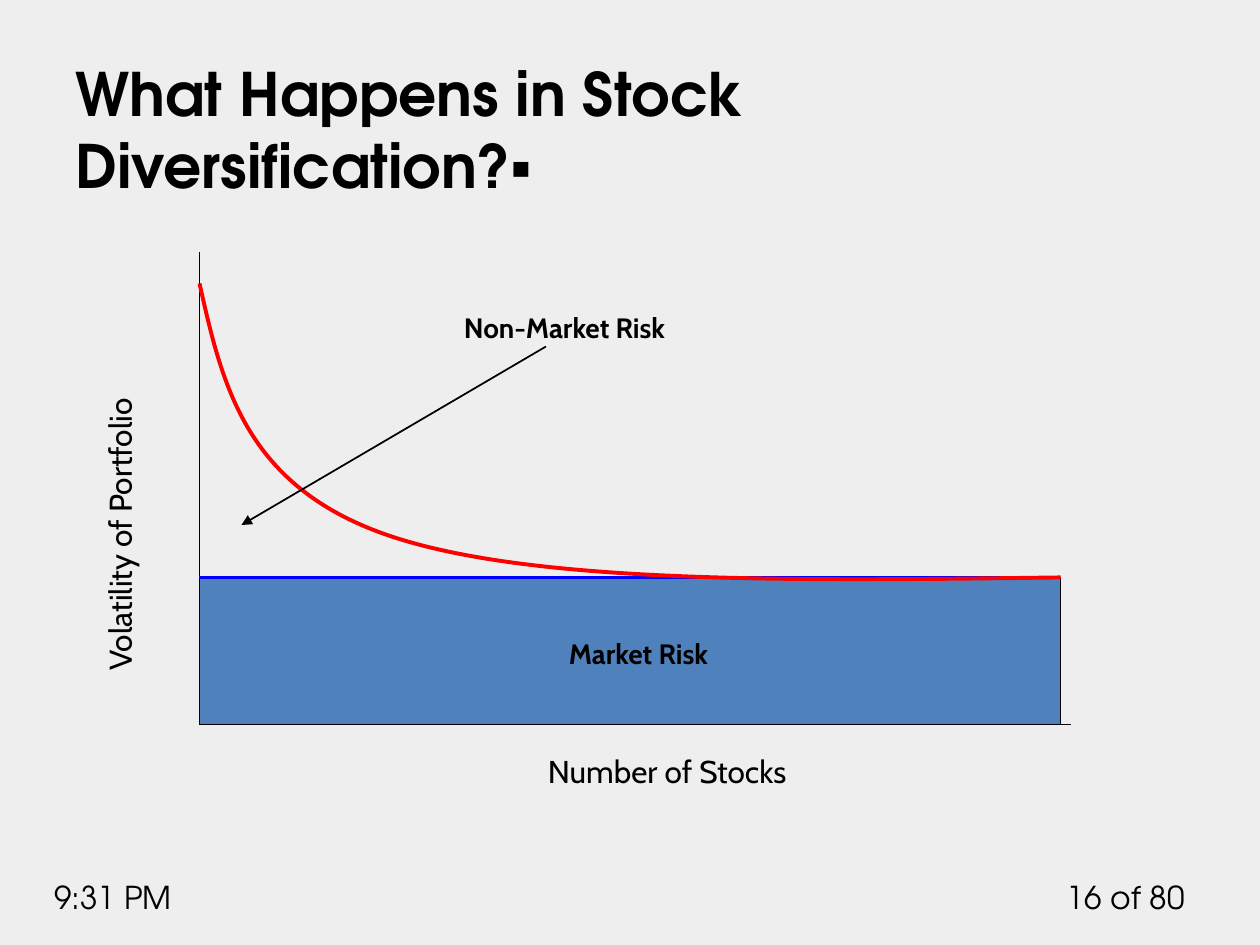
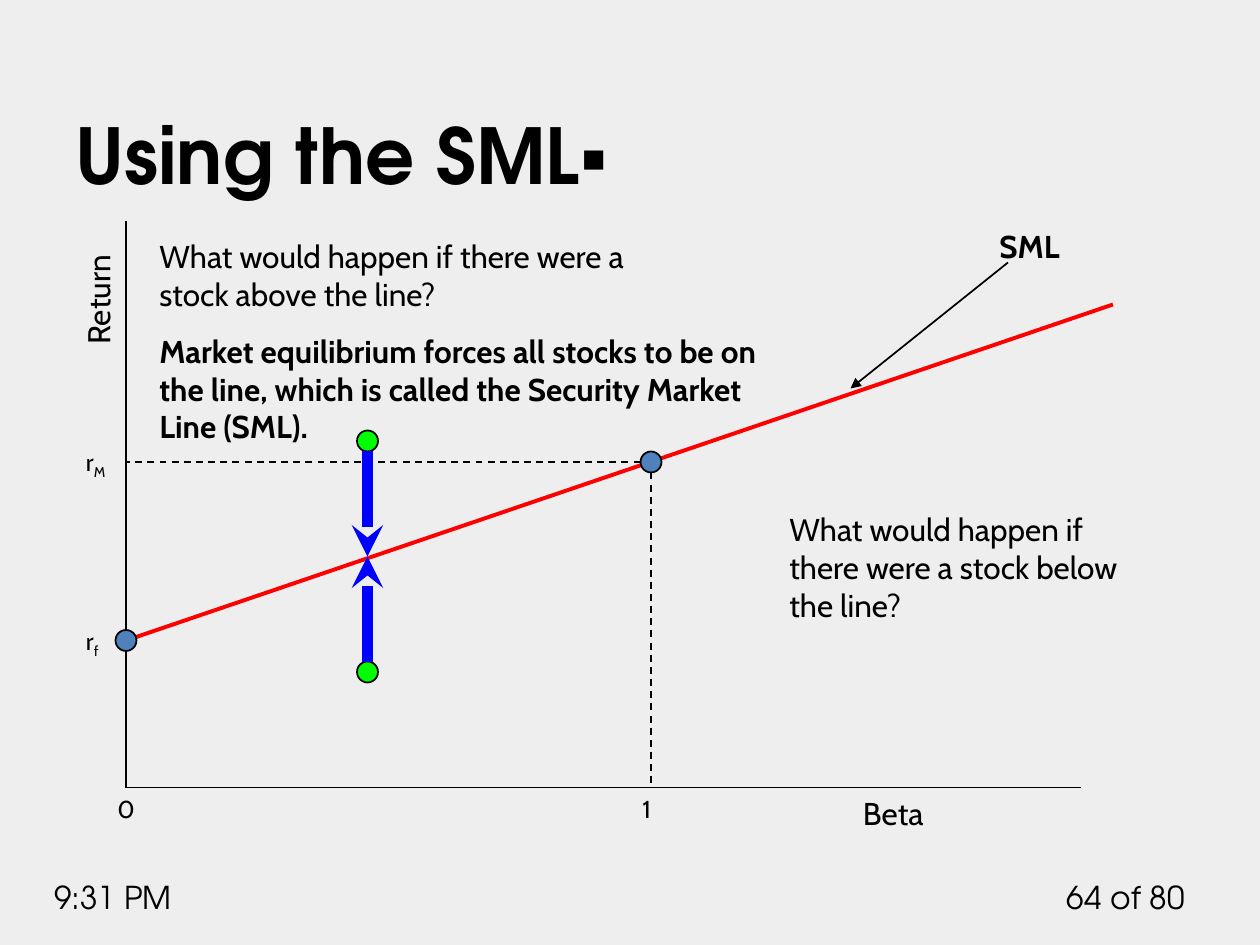
import pptx
import pptx.dml.color
import pptx.enum.dml
import pptx.enum.shapes
import pptx.enum.text
import pptx.oxml.ns
import pptx.oxml.xmlchemy
import pptx.util

Pt = pptx.util.Pt
ALIGN = pptx.enum.text.PP_ALIGN
ANCHOR = pptx.enum.text.MSO_ANCHOR
SHAPE = pptx.enum.shapes.MSO_SHAPE
new_element = pptx.oxml.xmlchemy.OxmlElement
qn = pptx.oxml.ns.qn

COLOURS = {
    "background": "EEEEEE",
    "ink": "000000",
    "market": "4F81BD",
    "level": "0000FF",
    "curve": "FF0000",
    "stock": "00FF00",
}
HEADING_FONT = "TeX Gyre Adventor"
BODY_FONT = "Cabin"
MARK_FONT = "Arial"
DOT = 12


def colour(name):
    return pptx.dml.color.RGBColor.from_string(COLOURS[name])


def add_text(slide, box, text, size=18, font=BODY_FONT, bold=False,
             align=ALIGN.LEFT, anchor=ANCHOR.TOP, rotation=0,
             mark="", subscript=""):
    """Place text in box (left, top, width, height), with an optional end mark or subscript."""
    textbox = slide.shapes.add_textbox(*map(Pt, box))
    textbox.rotation = rotation
    frame = textbox.text_frame
    frame.word_wrap = True
    frame.vertical_anchor = anchor
    paragraph = frame.paragraphs[0]
    paragraph.alignment = align
    for content, face, baseline in ((text, font, None),
                                    (mark, MARK_FONT, None),
                                    (subscript, font, "-25000")):
        if not content:
            continue
        run = paragraph.add_run()
        run.text = content
        run.font.name = face
        run.font.size = Pt(size)
        run.font.bold = bold
        run.font.color.rgb = colour("ink")
        if baseline:
            run._r.get_or_add_rPr().set("baseline", baseline)


def add_line(slide, start, end, ink="ink", width=1, dashed=False, head=None):
    """Draw a straight line; head names the arrowhead at its end."""
    line = slide.shapes.add_connector(
        pptx.enum.shapes.MSO_CONNECTOR.STRAIGHT, *map(Pt, start + end))
    line.line.color.rgb = colour(ink)
    line.line.width = Pt(width)
    if dashed:
        line.line.dash_style = pptx.enum.dml.MSO_LINE.DASH
    properties = line._element.spPr
    if head:
        arrowhead = new_element("a:tailEnd")
        arrowhead.set("type", head)
        properties.find(qn("a:ln")).append(arrowhead)
    properties.append(new_element("a:effectLst"))


def add_filled(slide, preset, box, fill):
    shape = slide.shapes.add_shape(preset, *map(Pt, box))
    shape.shadow.inherit = False
    shape.fill.solid()
    shape.fill.fore_color.rgb = colour(fill)
    shape.line.color.rgb = colour("ink")
    shape.line.width = Pt(1)


def add_dot(slide, centre, fill):
    x, y = centre
    add_filled(slide, SHAPE.OVAL, (x - DOT / 2, y - DOT / 2, DOT, DOT), fill)


def add_curve(slide, points, ink, width):
    """Draw cubic Bezier pieces: a start point, then two controls and an end for each."""
    corners = [(Pt(x), Pt(y)) for x, y in points]
    builder = slide.shapes.build_freeform(*corners[0])
    builder.add_line_segments(corners[1:], close=False)
    curve = builder.convert_to_shape()
    curve.shadow.inherit = False
    curve.fill.background()
    curve.line.color.rgb = colour(ink)
    curve.line.width = Pt(width)
    outline = next(curve._element.iter(qn("a:path")))
    segments = outline.findall(qn("a:lnTo"))
    for first in range(0, len(segments), 3):
        bezier = new_element("a:cubicBezTo")
        for segment in segments[first:first + 3]:
            bezier.append(segment[0])
            outline.remove(segment)
        outline.append(bezier)


def add_axes(slide, origin, top, right):
    add_line(slide, (origin[0], top), origin)
    add_line(slide, origin, (right, origin[1]))


def add_base_slide(deck, title, title_size, number):
    """Add a slide with the shared background, title and footers."""
    slide = deck.slides.add_slide(deck.slide_layouts[6])
    slide.background.fill.solid()
    slide.background.fill.fore_color.rgb = colour("background")
    add_text(slide, (600, 498, 84, 29), f"{number} of 80",
             font=HEADING_FONT, align=ALIGN.RIGHT)
    add_text(slide, (24, 498, 114, 29), "9:31 PM", font=HEADING_FONT)
    add_text(slide, (36, 28, 648, 90), title, size=title_size,
             font=HEADING_FONT, bold=True, anchor=ANCHOR.BOTTOM, mark="▪")
    return slide


def add_diversification(deck):
    slide = add_base_slide(deck, "What Happens in Stock Diversification?", 34.2, 16)
    origin = left, bottom = 114, 414
    right, market_level = 606, 330
    add_filled(slide, SHAPE.RECTANGLE,
               (left, market_level, right - left, bottom - market_level), "market")
    add_axes(slide, origin, top=144, right=612)
    add_text(slide, (306, 426, 246, 29), "Number of Stocks")
    add_text(slide, (-54.7, 252.7, 246, 29), "Volatility of Portfolio", rotation=270)
    add_line(slide, (left, market_level), (right, market_level), "level", 2.25)
    add_curve(slide, [(left, 162), (127, 220), (140, 278), (222, 306),
                      (304, 334), (455, 332), (right, market_level)], "curve", 2.25)
    add_text(slide, (318, 360, 114, 27), "Market Risk", size=16, bold=True)
    add_text(slide, (258, 174, 204, 27), "Non-Market Risk", size=16, bold=True)
    add_line(slide, (312, 198), (138, 300), head="triangle")


def add_security_market_line(deck):
    slide = add_base_slide(deck, "Using the SML", 44, 64)
    origin = left, bottom = 72, 450
    risk_free = left, 366
    market = market_x, market_y = 372, 264
    stock_x, fair_y = 210, 318

    add_axes(slide, origin, top=126, right=618)
    add_text(slide, (486, bottom, 90, 29), "Beta")
    add_text(slide, (20, 153.4, 72, 29), "Return", rotation=270)
    add_line(slide, (market_x, market_y + DOT / 2), (market_x, bottom), dashed=True)
    add_line(slide, (market_x - DOT / 2, market_y), (left, market_y), dashed=True)
    for top, subscript in ((252, "M"), (354, "f")):
        add_text(slide, (42, top, 30, 24), "r", size=14, subscript=subscript)
    for tick_left, beta in ((60, "0"), (360, "1")):
        add_text(slide, (tick_left, bottom, 30, 24), beta, size=14)

    add_line(slide, risk_free, (636, 174), "curve", 2.25)
    add_dot(slide, market, "market")
    add_dot(slide, risk_free, "market")
    for stock_y, arrow_y in ((384, 378), (252, 258)):
        add_dot(slide, (stock_x, stock_y), "stock")
        add_line(slide, (stock_x, arrow_y), (stock_x, fair_y), "level", 6, head="stealth")

    add_text(slide, (444, 288, 204, 73),
             "What would happen if there were a stock below the line?")
    add_text(slide, (84, 132, 306, 51),
             "What would happen if there were a stock above the line?")
    add_text(slide, (84, 186, 378, 73),
             "Market equilibrium forces all stocks to be on the line, "
             "which is called the Security Market Line (SML).", bold=True)
    add_text(slide, (564, 126, 54, 29), "SML", bold=True)
    add_line(slide, (576, 150), (486, 222), head="triangle")


def main():
    deck = pptx.Presentation()
    deck.slide_width, deck.slide_height = Pt(720), Pt(540)
    add_diversification(deck)
    add_security_market_line(deck)
    deck.save("out.pptx")


if __name__ == "__main__":
    main()
